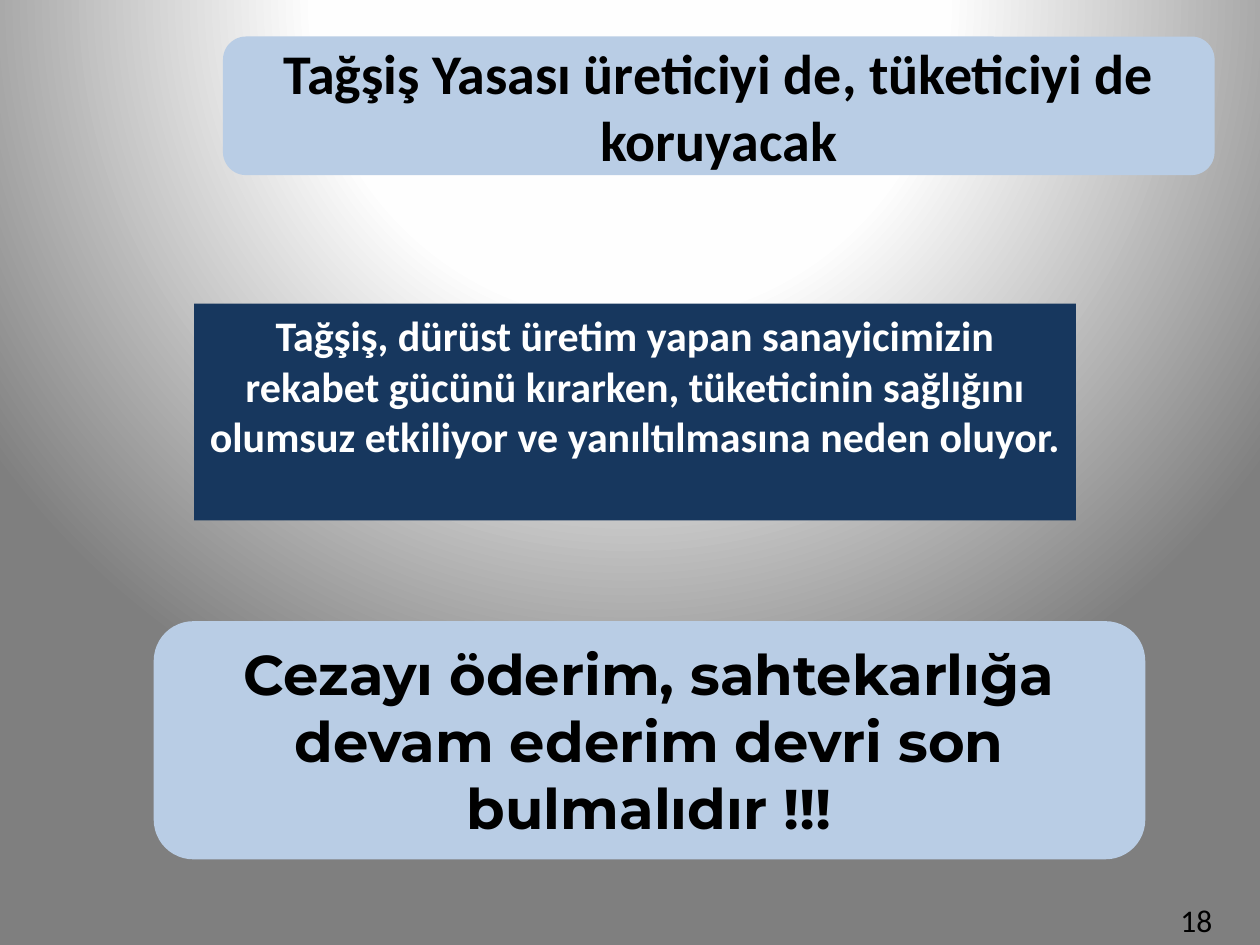
from pptx import Presentation
from pptx.dml.color import RGBColor
from pptx.enum.shapes import MSO_SHAPE
from pptx.enum.text import MSO_ANCHOR, MSO_AUTO_SIZE, PP_ALIGN
from pptx.oxml import parse_xml
from pptx.oxml.ns import nsdecls
from pptx.util import Inches, Pt

RECT, ROUND = MSO_SHAPE.RECTANGLE, MSO_SHAPE.ROUNDED_RECTANGLE
TOP, MIDDLE = MSO_ANCHOR.TOP, MSO_ANCHOR.MIDDLE
LEFT, CENTER = PP_ALIGN.LEFT, PP_ALIGN.CENTER
NO_FIT = MSO_AUTO_SIZE.NONE
PALE, NAVY, BLACK, WHITE = "B9CDE5", "17375E", "000000", "FFFFFF"
STOPS = [(0, "FFFFFF"), (40, "FEFEFE"), (100, "7F7F7F")]


def color(code):
    return RGBColor.from_string(code)


def set_back(slide):
    """Fill the background with a radial gradient centred above the slide."""
    stops = "".join(
        f'<a:gs pos="{pos * 1000}"><a:srgbClr val="{code}"/></a:gs>'
        for pos, code in STOPS)
    slide.element.cSld.insert(0, parse_xml(
        f'<p:bg {nsdecls("p", "a")}><p:bgPr><a:gradFill rotWithShape="1">'
        f'<a:gsLst>{stops}</a:gsLst><a:path path="circle">'
        '<a:fillToRect l="50000" t="-80000" r="50000" b="180000"/>'
        '</a:path></a:gradFill><a:effectLst/></p:bgPr></p:bg>'))


def add_panel(slide, box, kind, fill):
    panel = slide.shapes.add_shape(kind, *map(Inches, box))
    panel.shadow.inherit = False
    panel.fill.solid()
    panel.fill.fore_color.rgb = color(fill)
    panel.line.fill.background()
    return panel


def set_text(shape, text, size, ink=BLACK, font="Calibri", bold=True,
             align=CENTER, anchor=MIDDLE):
    frame = shape.text_frame
    frame.text = text
    frame.word_wrap = True
    frame.auto_size = NO_FIT
    frame.vertical_anchor = anchor
    para = frame.paragraphs[0]
    para.alignment = align
    para.font.name = font
    para.font.size = Pt(size)
    para.font.bold = bold
    para.font.color.rgb = color(ink)


def add_title(slide, box):
    panel = add_panel(slide, box, ROUND, PALE)
    title = slide.shapes.title
    panel.element.addnext(title.element)
    title.left, title.top, title.width, title.height = map(Inches, box)
    set_text(title, "Tağşiş Yasası üreticiyi de, tüketiciyi de koruyacak", 32)


def add_harm(slide, box):
    panel = add_panel(slide, box, RECT, NAVY)
    set_text(panel, "Tağşiş, dürüst üretim yapan sanayicimizin rekabet gücünü "
             "kırarken, tüketicinin sağlığını olumsuz etkiliyor ve "
             "yanıltılmasına neden oluyor.", 24, ink=WHITE, anchor=TOP)


def add_call(slide, box):
    panel = add_panel(slide, box, ROUND, PALE)
    set_text(panel, "Cezayı öderim, sahtekarlığa devam ederim devri son "
             "bulmalıdır !!!", 32, font="Montserrat")


def add_number(slide, box):
    label = slide.shapes.add_textbox(*map(Inches, box))
    set_text(label, "18", 18, bold=False, align=LEFT, anchor=TOP)


def main():
    deck = Presentation()
    deck.slide_width, deck.slide_height = Inches(10), Inches(7.5)
    slide = deck.slides.add_slide(deck.slide_layouts[5])
    set_back(slide)
    add_title(slide, (1.77, 0.29, 7.87, 1.1))
    add_harm(slide, (1.54, 2.41, 7, 1.72))
    add_call(slide, (1.22, 4.93, 7.87, 1.89))
    add_number(slide, (9.27, 7.1, 0.51, 0.4))
    deck.save("out.pptx")


if __name__ == "__main__":
    main()
